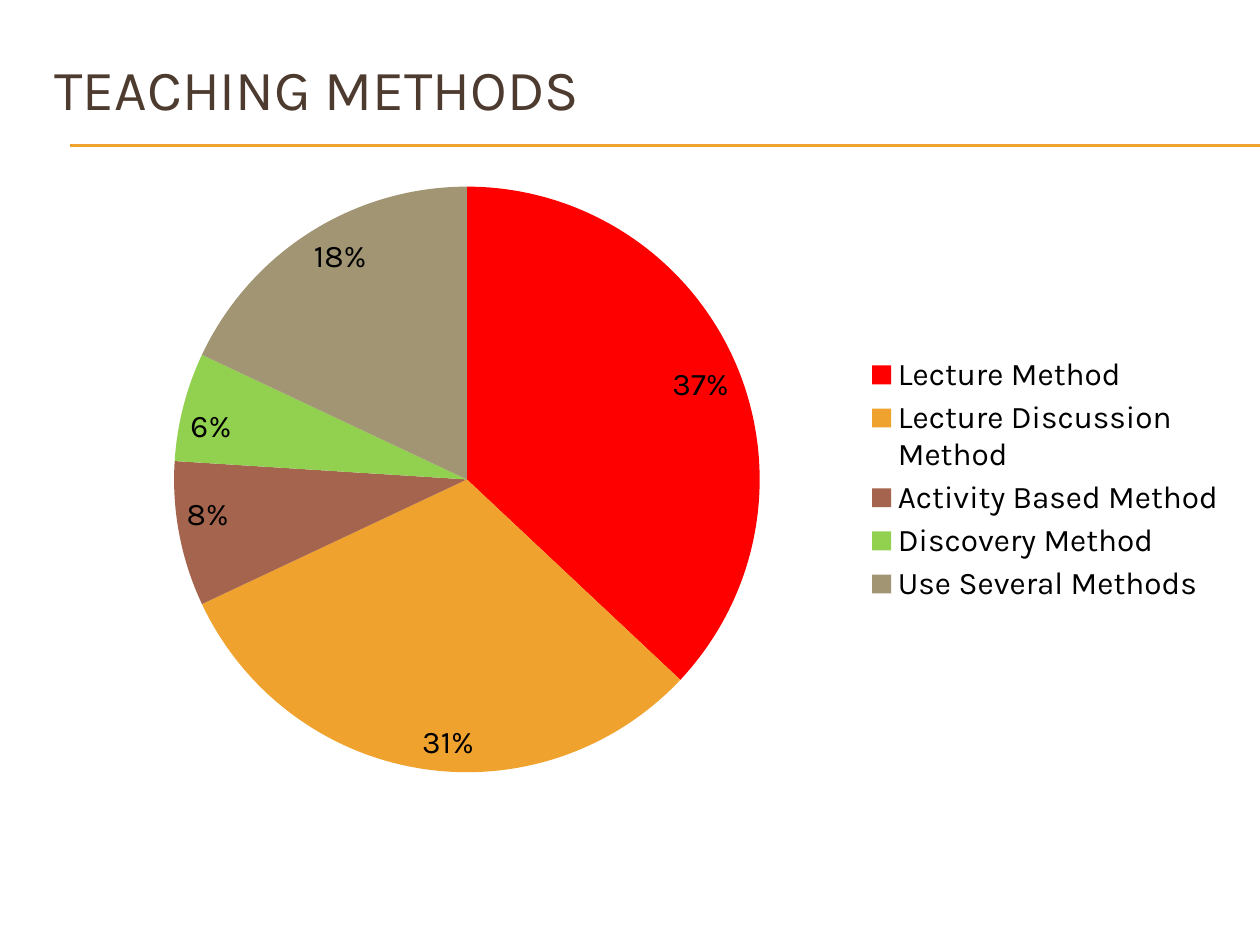
from dataclasses import dataclass

from lxml.etree import SubElement
from pptx import Presentation
from pptx.chart.data import CategoryChartData
from pptx.dml.color import RGBColor
from pptx.enum.chart import XL_CHART_TYPE, XL_LABEL_POSITION, XL_LEGEND_POSITION
from pptx.enum.shapes import MSO_CONNECTOR
from pptx.enum.text import MSO_ANCHOR, MSO_AUTO_SIZE, PP_ALIGN
from pptx.oxml import parse_xml
from pptx.oxml.ns import nsdecls, qn
from pptx.util import Pt


@dataclass(frozen=True)
class Theme:
    font: str = "Karla"
    title_size: float = 32.4
    chart_size: float = 18
    title_color: str = "4E3B30"
    text_color: str = "000000"
    rule_color: str = "F0A22E"


theme = Theme()

# Method, percentage of teachers, slice colour
methods = [
    ("Lecture Method", 37, "FF0000"),
    ("Lecture Discussion Method", 31, "F0A22E"),
    ("Activity Based Method", 8, "A5644E"),
    ("Discovery Method", 6, "92D050"),
    ("Use Several Methods", 18, "A19574"),
]

presentation = Presentation()
presentation.slide_width, presentation.slide_height = Pt(720), Pt(540)
slide = presentation.slides.add_slide(presentation.slide_layouts[5])

# Double rule under the heading
for rule_y in (82.8, 83.5):
    rule = slide.shapes.add_connector(
        MSO_CONNECTOR.STRAIGHT, Pt(40.3), Pt(rule_y), Pt(720), Pt(rule_y)
    )
    rule.line.color.rgb = RGBColor.from_string(theme.rule_color)
    rule.line.width = Pt(0.75)
    SubElement(rule._element.spPr, qn("a:effectLst"))

# Heading
heading = slide.shapes.title
heading_box = {"left": 24, "top": 31, "width": 684, "height": 66}
for side, length in heading_box.items():
    setattr(heading, side, Pt(length))
heading_frame = heading.text_frame
heading_frame.text = "TEACHING METHODS"
frame_format = {
    "vertical_anchor": MSO_ANCHOR.TOP,
    "margin_top": 0,
    "word_wrap": True,
    "auto_size": MSO_AUTO_SIZE.NONE,
}
for attribute, value in frame_format.items():
    setattr(heading_frame, attribute, value)
heading_line = heading_frame.paragraphs[0]
heading_line.alignment = PP_ALIGN.LEFT
heading_font = heading_line.runs[0].font
heading_font.name = theme.font
heading_font.size = Pt(theme.title_size)
heading_font.color.rgb = RGBColor.from_string(theme.title_color)

# Share of each method
shares = CategoryChartData()
shares.categories = [method for method, _, _ in methods]
shares.add_series("Series 1", [share for _, share, _ in methods])
pie = slide.shapes.add_chart(
    XL_CHART_TYPE.PIE, Pt(24), Pt(96), Pt(684), Pt(356), shares
).chart
pie.has_title = False
pie.font.name = theme.font
pie.font.size = Pt(theme.chart_size)
pie.font.color.rgb = RGBColor.from_string(theme.text_color)

pie.has_legend = True
pie.legend.position = XL_LEGEND_POSITION.RIGHT
pie.legend.include_in_layout = False

plot = pie.plots[0]
plot.vary_by_categories = True
for index, (_, _, color) in enumerate(methods):
    slice_fill = plot.series[0].points[index].format.fill
    slice_fill.solid()
    slice_fill.fore_color.rgb = RGBColor.from_string(color)

plot.has_data_labels = True
label_format = {
    "show_percentage": True,
    "show_value": False,
    "number_format": "0%",
    "number_format_is_linked": False,
    "position": XL_LABEL_POSITION.INSIDE_END,
}
for attribute, value in label_format.items():
    setattr(plot.data_labels, attribute, value)

# Place the pie as fractions of the chart area
plot_area = pie._chartSpace.chart.plotArea
for automatic_layout in plot_area.findall(qn("c:layout")):
    plot_area.remove(automatic_layout)
fractions = {"x": 0.11, "y": 0.03, "w": 0.49, "h": 0.94}
positions = "".join(f'<c:{key} val="{value}"/>' for key, value in fractions.items())
plot_area.insert(0, parse_xml(
    f'<c:layout {nsdecls("c")}><c:manualLayout><c:layoutTarget val="inner"/>'
    f'<c:xMode val="edge"/><c:yMode val="edge"/>{positions}'
    "</c:manualLayout></c:layout>"
))

presentation.save("out.pptx")
